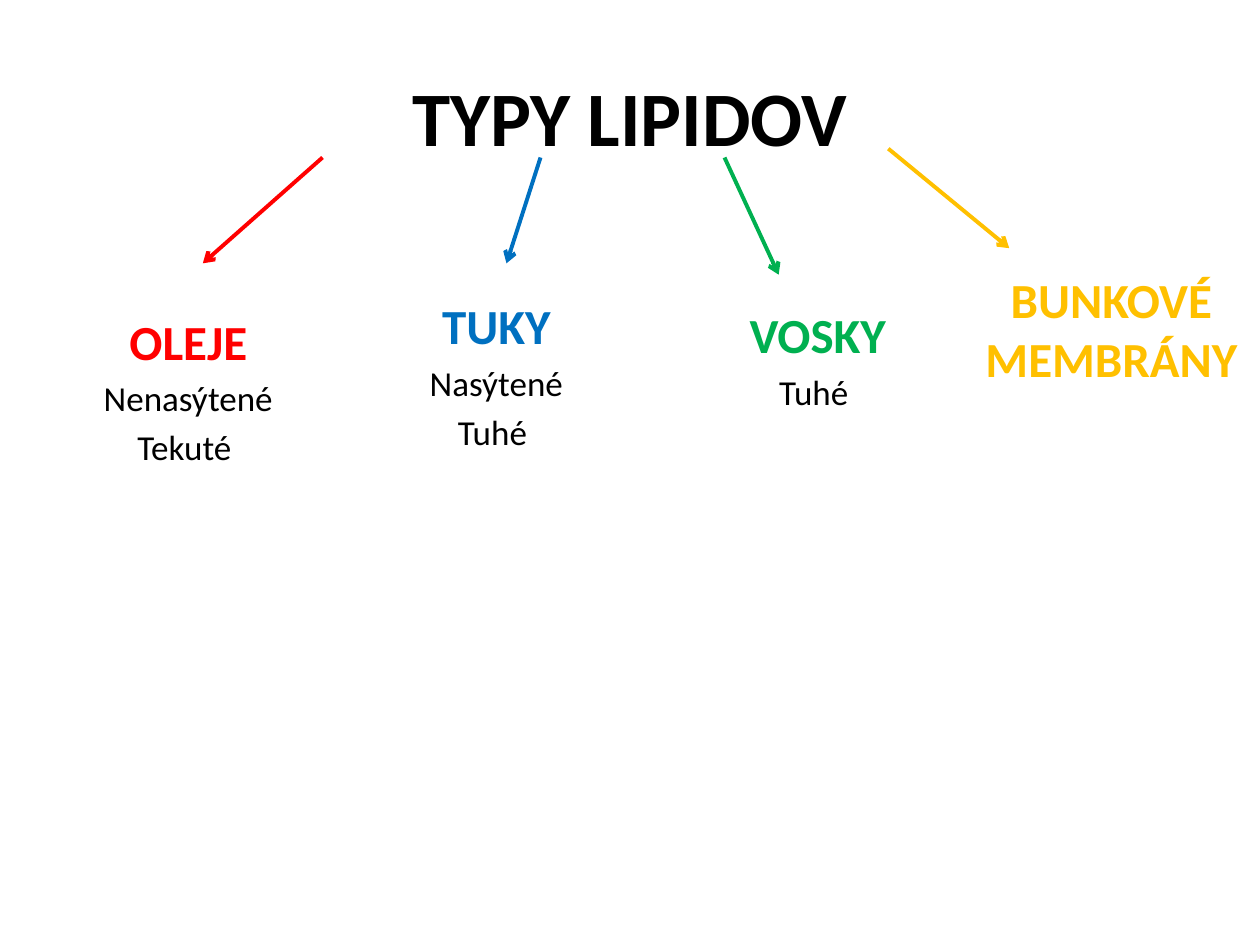
from lxml.etree import SubElement
from pptx import Presentation
from pptx.dml.color import RGBColor
from pptx.enum.shapes import MSO_CONNECTOR
from pptx.enum.text import MSO_ANCHOR, PP_ALIGN
from pptx.oxml.ns import qn
from pptx.util import Inches, Pt

BLACK = RGBColor(0x00, 0x00, 0x00)
RED = RGBColor(0xFF, 0x00, 0x00)
BLUE = RGBColor(0x00, 0x70, 0xC0)
GREEN = RGBColor(0x00, 0xB0, 0x50)
GOLD = RGBColor(0xFF, 0xC0, 0x00)

# Heading, properties, colour, text area, arrow start and arrow end
LIPID_TYPES = [
    ("OLEJE", ["Nenasýtené", "Tekuté "], RED,
     (0.43, 2.42, 2.13, 4.95), (2.56, 1.25), (1.61, 2.09)),
    ("TUKY", ["Nasýtené", "Tuhé "], BLUE,
     (2.56, 2.3, 2.76, 4.8), (4.29, 1.25), (4.02, 2.09)),
    ("VOSKY", ["Tuhé "], GREEN,
     (5.31, 2.37, 2.36, 4.67), (5.75, 1.25), (6.18, 2.18)),
    ("BUNKOVÉ MEMBRÁNY", [], GOLD,
     (7.64, 2.09, 2.36, 4.67), (7.05, 1.18), (8.01, 1.97)),
]


def add_box(slide, area, anchor=MSO_ANCHOR.TOP):
    box = slide.shapes.add_textbox(*map(Inches, area))
    frame = box.text_frame
    frame.word_wrap = True
    frame.vertical_anchor = anchor
    return frame


def write(para, text, size=20, color=BLACK, bold=False, before=0):
    para.alignment = PP_ALIGN.CENTER
    para.space_before = Pt(before)
    span = para.add_run()
    span.text = text
    span.font.name = "Calibri"
    span.font.size = Pt(size)
    span.font.bold = bold
    span.font.color.rgb = color


def add_arrow(slide, start, end, color):
    arrow = slide.shapes.add_connector(
        MSO_CONNECTOR.STRAIGHT, *map(Inches, start + end))
    arrow.line.color.rgb = color
    arrow.line.width = Pt(2.25)
    SubElement(arrow.line._get_or_add_ln(), qn("a:tailEnd"), type="arrow")
    SubElement(arrow._element.spPr, qn("a:effectLst"))


def add_lipid_type(slide, heading, properties, color, area, start, end):
    frame = add_box(slide, area)
    write(frame.paragraphs[0], heading, size=28, color=color, bold=True)
    for text in properties:
        write(frame.add_paragraph(), text, before=4)
    add_arrow(slide, start, end, color)


def main():
    deck = Presentation()
    deck.slide_width = Inches(10)
    deck.slide_height = Inches(7.5)
    slide = deck.slides.add_slide(deck.slide_layouts[6])
    title = add_box(slide, (0.5, 0.3, 9, 1.24), anchor=MSO_ANCHOR.MIDDLE)
    write(title.paragraphs[0], "TYPY LIPIDOV", size=44, bold=True)
    for lipid_type in LIPID_TYPES:
        add_lipid_type(slide, *lipid_type)
    deck.save("out.pptx")


if __name__ == "__main__":
    main()
